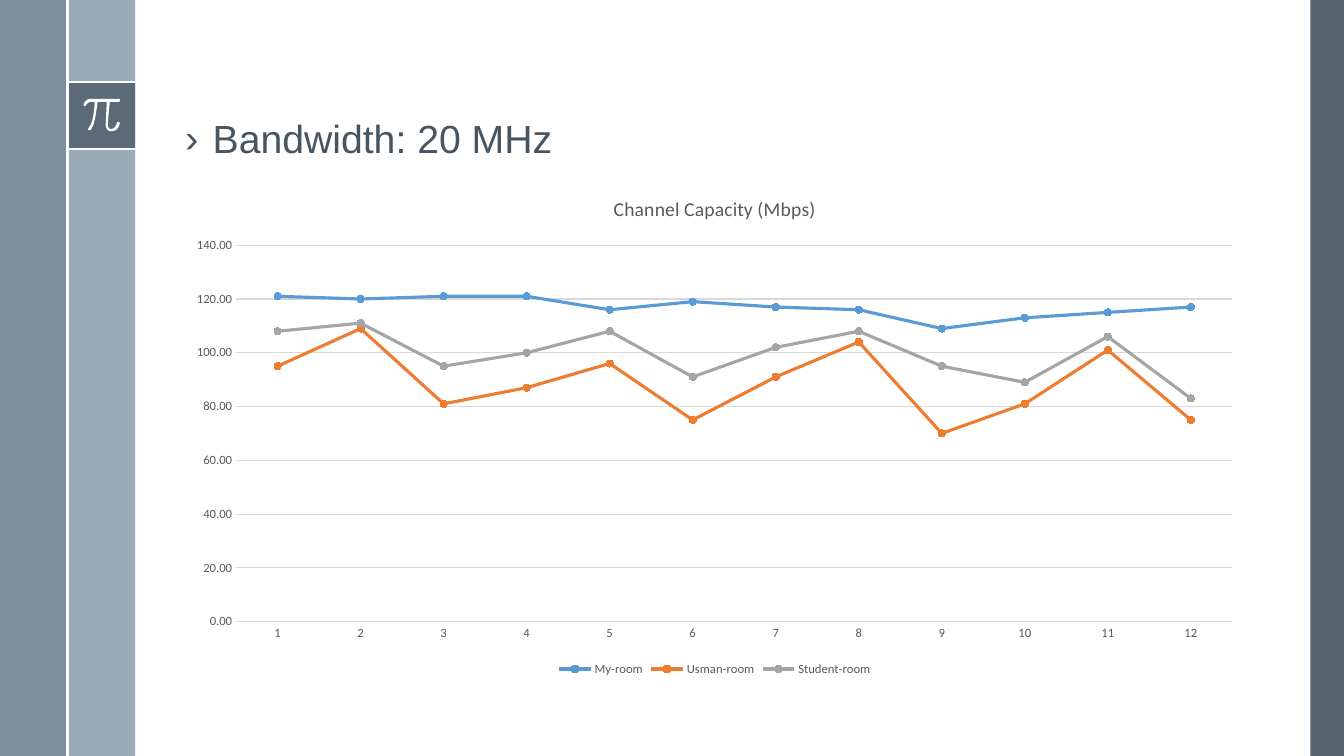
from lxml.etree import SubElement
from pptx import Presentation
from pptx.chart.data import CategoryChartData
from pptx.dml.color import RGBColor
from pptx.enum.chart import XL_CHART_TYPE, XL_LEGEND_POSITION, XL_MARKER_STYLE, XL_TICK_MARK
from pptx.enum.shapes import MSO_CONNECTOR, MSO_SHAPE
from pptx.enum.text import MSO_ANCHOR
from pptx.oxml.ns import qn
from pptx.util import Pt

WHITE = RGBColor(0xFF, 0xFF, 0xFF)
SLATE = RGBColor(0x47, 0x55, 0x62)
STEEL = RGBColor(0x6A, 0x80, 0x93)
MIST = RGBColor(0x9B, 0xAA, 0xB7)
INK = RGBColor(0x46, 0x55, 0x62)
GRAY = RGBColor(0x59, 0x59, 0x59)
GRID = RGBColor(0xD9, 0xD9, 0xD9)
BLUE = RGBColor(0x5B, 0x9B, 0xD5)
ORANGE = RGBColor(0xED, 0x7D, 0x31)
SILVER = RGBColor(0xA5, 0xA5, 0xA5)

BAND = 48.24
BADGE_TOP = 58.32
CONTENT_LEFT, CONTENT_WIDTH = 125.28, 770.4

CAPACITY = [
    ("My-room", BLUE, (121, 120, 121, 121, 116, 119, 117, 116, 109, 113, 115, 117)),
    ("Usman-room", ORANGE, (95, 109, 81, 87, 96, 75, 91, 104, 70, 81, 101, 75)),
    ("Student-room", SILVER, (108, 111, 95, 100, 108, 91, 102, 108, 95, 89, 106, 83)),
]

PI_OUTLINE = [
    (84.96, 70.56), (64.8, 70.56),
    (61.2, 70.56, 59.76, 74.16, 59.76, 74.88),
    (59.76, 74.88, 59.76, 75.6, 60.48, 75.6), (61.2, 75.6),
    (61.2, 75.6, 62.64, 72.72, 64.8, 72.72), (67.68, 72.72),
    (67.68, 75.6, 66.96, 87.84, 63.36, 91.44),
    (62.64, 92.16, 62.64, 92.16, 63.36, 92.88),
    (63.36, 92.88, 64.08, 92.88, 64.08, 92.88),
    (64.08, 92.88, 64.8, 92.88, 64.8, 92.88),
    (68.4, 88.56, 69.12, 75.6, 69.84, 72.72), (76.32, 72.72), (75.6, 87.84),
    (75.6, 87.84, 74.88, 90.72, 77.04, 92.88),
    (77.76, 93.6, 78.48, 93.6, 79.2, 93.6),
    (79.92, 93.6, 79.92, 93.6, 80.64, 93.6),
    (84.24, 93.6, 85.68, 88.56, 85.68, 87.84),
    (85.68, 87.84, 84.96, 87.12, 84.96, 87.12),
    (84.24, 87.12, 83.52, 87.12, 83.52, 87.84),
    (83.52, 87.84, 82.8, 91.44, 79.92, 92.16),
    (79.2, 92.16, 78.48, 92.16, 77.76, 91.44),
    (77.04, 90.72, 77.04, 88.56, 77.04, 87.84), (78.48, 72.72), (84.96, 72.72),
    (85.68, 72.72, 85.68, 72, 85.68, 72),
    (85.68, 71.28, 85.68, 70.56, 84.96, 70.56),
]


def format_font(font, size=9, color=GRAY, name="Calibri"):
    """Apply size, colour and typeface to a font."""
    font.size, font.name, font.bold = Pt(size), name, False
    font.color.rgb = color


def add_text(tf, text, **style):
    """Write text into the first paragraph and format its run."""
    p = tf.paragraphs[0]
    r = p.add_run()
    r.text = text
    format_font(r.font, **style)
    return p


def curve_points(start, x1, y1, x2, y2, x3, y3, steps=6):
    """Return points along a cubic curve."""
    points = []
    for i in range(1, steps + 1):
        t = i / steps
        u = 1 - t
        points.append(tuple(
            u**3 * a + 3 * u * u * t * b + 3 * u * t * t * c + t**3 * d
            for a, b, c, d in zip(start, (x1, y1), (x2, y2), (x3, y3))))
    return points


class Deck:
    """Hold the style and the current slide."""

    def __init__(self, prs):
        """Add a content slide without its title."""
        self.heading = dict(size=28, color=INK, name="Arial")
        self.rule_color, self.rule_width = WHITE, 1.5
        self.slide = prs.slides.add_slide(prs.slide_layouts[1])
        self.shapes = self.slide.shapes
        title = self.shapes.title._element
        title.getparent().remove(title)

    def paint(self, sp, color, opacity=100):
        """Give a shape a plain fill without line or shadow."""
        sp.shadow.inherit = False
        sp.line.fill.background()
        sp.fill.solid()
        sp.fill.fore_color.rgb = color
        if opacity < 100:
            clr = sp._element.spPr.find(qn("a:solidFill"))[0]
            SubElement(clr, qn("a:alpha")).set("val", str(opacity * 1000))

    def rect(self, x, y, w, h, color, opacity=100):
        """Add a filled rectangle."""
        sp = self.shapes.add_shape(MSO_SHAPE.RECTANGLE, Pt(x), Pt(y), Pt(w), Pt(h))
        self.paint(sp, color, opacity)

    def rule(self, x1, y1, x2, y2):
        """Add a straight line."""
        sp = self.shapes.add_connector(MSO_CONNECTOR.STRAIGHT, Pt(x1), Pt(y1), Pt(x2), Pt(y2))
        sp.line.color.rgb, sp.line.width = self.rule_color, Pt(self.rule_width)
        SubElement(sp._element.spPr, qn("a:effectLst"))

    def outline(self, segments, color):
        """Add a filled outline of lines and curves."""
        points = [segments[0]]
        for segment in segments[1:]:
            points += [segment] if len(segment) == 2 else curve_points(points[-1], *segment)
        (x, y), *rest = [(100 * px, 100 * py) for px, py in points]
        builder = self.shapes.build_freeform(x, y, scale=Pt(0.01))
        builder.add_line_segments(rest, close=True)
        self.paint(builder.convert_to_shape(), color)

    def bullet(self, x, y, w, h, text):
        """Place the body placeholder with one bulleted line."""
        sp = self.slide.placeholders[1]
        sp.left, sp.top, sp.width, sp.height = Pt(x), Pt(y), Pt(w), Pt(h)
        tf = sp.text_frame
        tf.vertical_anchor = MSO_ANCHOR.TOP
        p = add_text(tf, text, **self.heading)
        p.line_spacing, p.space_before = 0.9, Pt(14)
        pPr = p._p.get_or_add_pPr()
        pPr.set("marL", str(Pt(19.44)))
        pPr.set("indent", str(-Pt(19.44)))
        SubElement(pPr, qn("a:buFont")).set("typeface", "Arial")
        SubElement(pPr, qn("a:buChar")).set("char", "›")

    def line_chart(self, x, y, w, h, title, series):
        """Add a line chart with markers."""
        data = CategoryChartData(number_format="0.00")
        data.categories = [str(n + 1) for n in range(len(series[0][2]))]
        for name, _, values in series:
            data.add_series(name, values)
        chart = self.shapes.add_chart(
            XL_CHART_TYPE.LINE_MARKERS, Pt(x), Pt(y), Pt(w), Pt(h), data).chart
        format_font(chart.font, size=10)
        chart.has_title = True
        add_text(chart.chart_title.text_frame, title, size=14)
        chart.chart_title.include_in_layout = False
        chart.has_legend = True
        chart.legend.position = XL_LEGEND_POSITION.BOTTOM
        chart.legend.include_in_layout = False
        format_font(chart.legend.font)
        cat, val = chart.category_axis, chart.value_axis
        for axis in (cat, val):
            axis.major_tick_mark = axis.minor_tick_mark = XL_TICK_MARK.NONE
            format_font(axis.tick_labels.font)
        val.minimum_scale, val.maximum_scale, val.major_unit = 0, 140, 20
        val.tick_labels.number_format = "0.00"
        val.tick_labels.number_format_is_linked = False
        val.format.line.fill.background()
        for line in (cat.format.line, val.major_gridlines.format.line):
            line.color.rgb, line.width = GRID, Pt(0.75)
        plot = chart.plots[0]
        plot.vary_by_categories = False
        for s, (_, color, _) in zip(plot.series, series):
            s.smooth = False
            s.format.line.color.rgb, s.format.line.width = color, Pt(2.25)
            s.marker.style, s.marker.size = XL_MARKER_STYLE.CIRCLE, 5
            s.marker.format.fill.solid()
            s.marker.format.fill.fore_color.rgb = color
            s.marker.format.line.color.rgb = color


def main():
    """Build and save the slide."""
    prs = Presentation()
    prs.slide_width, prs.slide_height = Pt(960), Pt(540)
    deck = Deck(prs)
    deck.rect(936, 0, 24, 540, SLATE, 90)
    deck.rect(BAND, 0, BAND, 540, MIST)
    deck.rect(0, 0, BAND, 540, STEEL, 88)
    deck.rect(BAND, BADGE_TOP, BAND, BAND, SLATE, 75)
    for y in (BADGE_TOP, BADGE_TOP + BAND):
        deck.rule(BAND, y, 2 * BAND, y)
    deck.outline(PI_OUTLINE, WHITE)
    deck.rule(BAND, 0, BAND, 540)
    deck.bullet(CONTENT_LEFT, 82.08, CONTENT_WIDTH, 403.92, "Bandwidth: 20 MHz")
    deck.line_chart(CONTENT_LEFT, 126, CONTENT_WIDTH, 360, "Channel Capacity (Mbps)", CAPACITY)
    prs.save("out.pptx")


if __name__ == "__main__":
    main()
